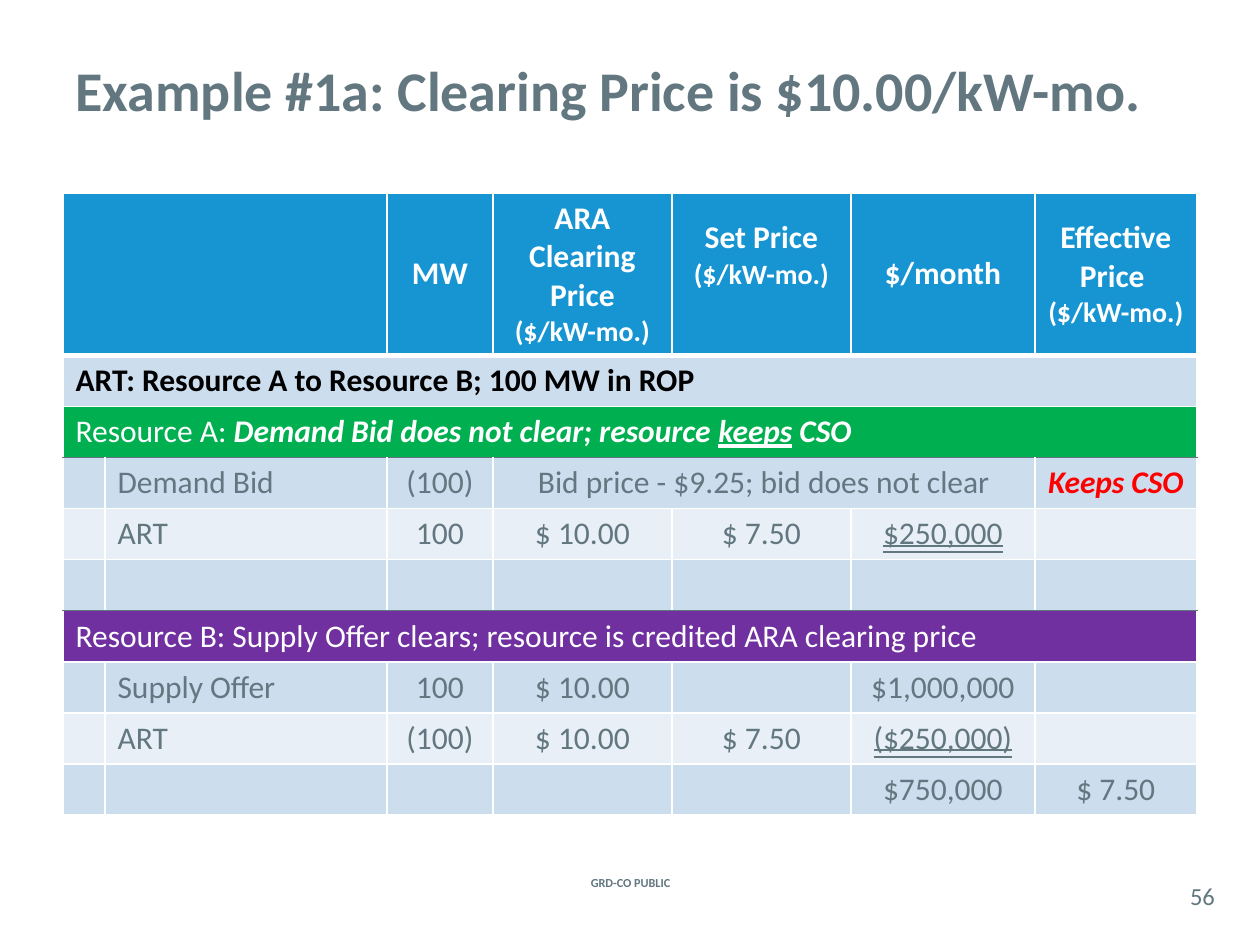
from pptx import Presentation
from pptx.dml.color import RGBColor as Rgb
from pptx.enum.text import MSO_ANCHOR as Anchor, MSO_UNDERLINE as Line, PP_ALIGN as Align
from pptx.oxml.ns import qn
from pptx.util import Pt
from lxml.etree import SubElement as Sub

PX = 914400 / 126
HEX = dict(slate="62777F", white="FFFFFF", black="000000", red="FF0000", blue="1795D2",
           band="CCDDEE", pale="E8EFF7", green="00B050", plum="7030A0")

COLS = [42, 282, 106, 179, 179, 184, 162]
HEAD, ROW = 162, 51
UNIT = ("($/kW-mo.)", dict(size=16))
BOLD = dict(bold=True, italic=True)
TWICE = dict(underline=Line.DOUBLE_LINE)

# Each cell: column -> list of paragraphs, each a list of (text, format)
TITLES = {2: [[("MW", {})]],
          3: [[("ARA Clearing Price", {})], [UNIT]],
          4: [[("Set Price ", {}), UNIT]],
          5: [[("$/month", {})]],
          6: [[("Effective Price ", {})], [UNIT]]}


def line(**cells):
    """Cells named c1, c2 ... hold a text or a (text, format) pair."""
    return {int(key[1:]): [[val if isinstance(val, tuple) else (val, {})]]
            for key, val in cells.items()}


# Rows: fill, text colour, bold, merged column spans, cells
ROWS = [
    ("blue", "white", True, [(0, 1)], TITLES),
    ("band", "black", True, [(0, 6)],
     line(c0="ART: Resource A to Resource B; 100 MW in ROP")),
    ("green", "white", False, [(0, 6)],
     {0: [[("Resource A: ", {}), ("Demand Bid does not clear; resource ", BOLD),
           ("keeps", dict(BOLD, underline=True)), (" CSO", BOLD)]]}),
    ("band", "slate", False, [(3, 5)],
     line(c1="Demand Bid", c2="(100)", c3="Bid price - $9.25; bid does not clear",
          c6=("Keeps CSO", dict(BOLD, color="red")))),
    ("pale", "slate", False, [],
     line(c1="ART", c2="100", c3="$ 10.00", c4="$ 7.50", c5=("$250,000", TWICE))),
    ("band", "slate", False, [], {}),
    ("plum", "white", False, [(0, 6)],
     line(c0="Resource B: Supply Offer clears; resource is credited ARA clearing price")),
    ("band", "slate", False, [],
     line(c1="Supply Offer", c2="100", c3="$ 10.00", c5="$1,000,000")),
    ("pale", "slate", False, [],
     line(c1="ART", c2="(100)", c3="$ 10.00", c4="$ 7.50", c5=("($250,000)", TWICE))),
    ("band", "slate", False, [], line(c5="$750,000", c6="$ 7.50")),
]
RULES = {1: ("white", 3), 3: ("slate", 1), 6: ("slate", 1)}  # lines above these rows


def px(num):
    return round(num * PX)


def write(frame, paras, align, **base):
    for num, runs in enumerate(paras):
        para = frame.paragraphs[0] if num == 0 else frame.add_paragraph()
        para.alignment = align
        for text, fmt in runs:
            run = para.add_run()
            run.text = text
            look = dict(dict(name="Calibri", bold=False), **base)
            look.update(fmt)
            run.font.color.rgb = Rgb.from_string(HEX[look.pop("color")])
            look["size"] = Pt(look["size"])
            for key, val in look.items():
                setattr(run.font, key, val)


def edge(cell, row):
    props = cell._tc.get_or_add_tcPr()
    sides = dict(L=("white", 1), R=("white", 1), T=RULES.get(row, ("white", 1)),
                 B=RULES.get(row + 1, ("white", 1)))
    for side, (color, width) in sides.items():
        ln = Sub(props, qn(f"a:ln{side}"), w=str(Pt(width)))
        Sub(Sub(ln, qn("a:solidFill")), qn("a:srgbClr"), val=HEX[color])


def title(slide, x, y, w, h):
    shape = slide.shapes.title
    shape.left, shape.top, shape.width, shape.height = map(px, (x, y, w, h))
    shape.text_frame.vertical_anchor = Anchor.MIDDLE
    write(shape.text_frame, [[("Example #1a: Clearing Price is $10.00/kW-mo.", {})]],
          Align.LEFT, size=32, color="slate", bold=True)


def grid(slide, x, y):
    tall = HEAD + ROW * (len(ROWS) - 1)
    table = slide.shapes.add_table(len(ROWS), len(COLS), px(x), px(y),
                                   px(sum(COLS)), px(tall)).table
    for col, wide in zip(table.columns, COLS):
        col.width = px(wide)
    for r, (fill, color, bold, spans, cells) in enumerate(ROWS):
        table.rows[r].height = px(ROW if r else HEAD)
        for c in range(len(COLS)):
            cell = table.cell(r, c)
            edge(cell, r)
            cell.fill.solid()
            cell.fill.fore_color.rgb = Rgb.from_string(HEX[fill])
            if r == 0:
                cell.vertical_anchor = Anchor.MIDDLE
            write(cell.text_frame, cells.get(c, []), Align.CENTER if c > 1 else Align.LEFT,
                  size=18, color=color, bold=bold)
        for first, last in spans:
            table.cell(r, first).merge(table.cell(r, last))
    table.cell(0, 4).margin_bottom = px(44)  # lifts the set price heading


def label(slide, text, x, y, w, h, **look):
    frame = slide.shapes.add_textbox(*map(px, (x, y, w, h))).text_frame
    form = dict(word_wrap=True, vertical_anchor=Anchor.MIDDLE, margin_left=0,
                margin_right=0, margin_top=0, margin_bottom=0)
    for key, val in form.items():
        setattr(frame, key, val)
    write(frame, [[(text, {})]], Align.CENTER, color="slate", **look)


def main():
    deck = Presentation()
    deck.slide_width, deck.slide_height = px(1260), px(945)
    slide = deck.slides.add_slide(deck.slide_layouts[5])
    title(slide, 63, 10, 1134, 158)
    grid(slide, 63, 193)
    # Footer
    label(slide, "GRD-CO PUBLIC", 538, 872, 185, 21, size=7, bold=True)
    label(slide, "56", 1176, 877, 53, 37, size=14)
    deck.save("out.pptx")


if __name__ == "__main__":
    main()
